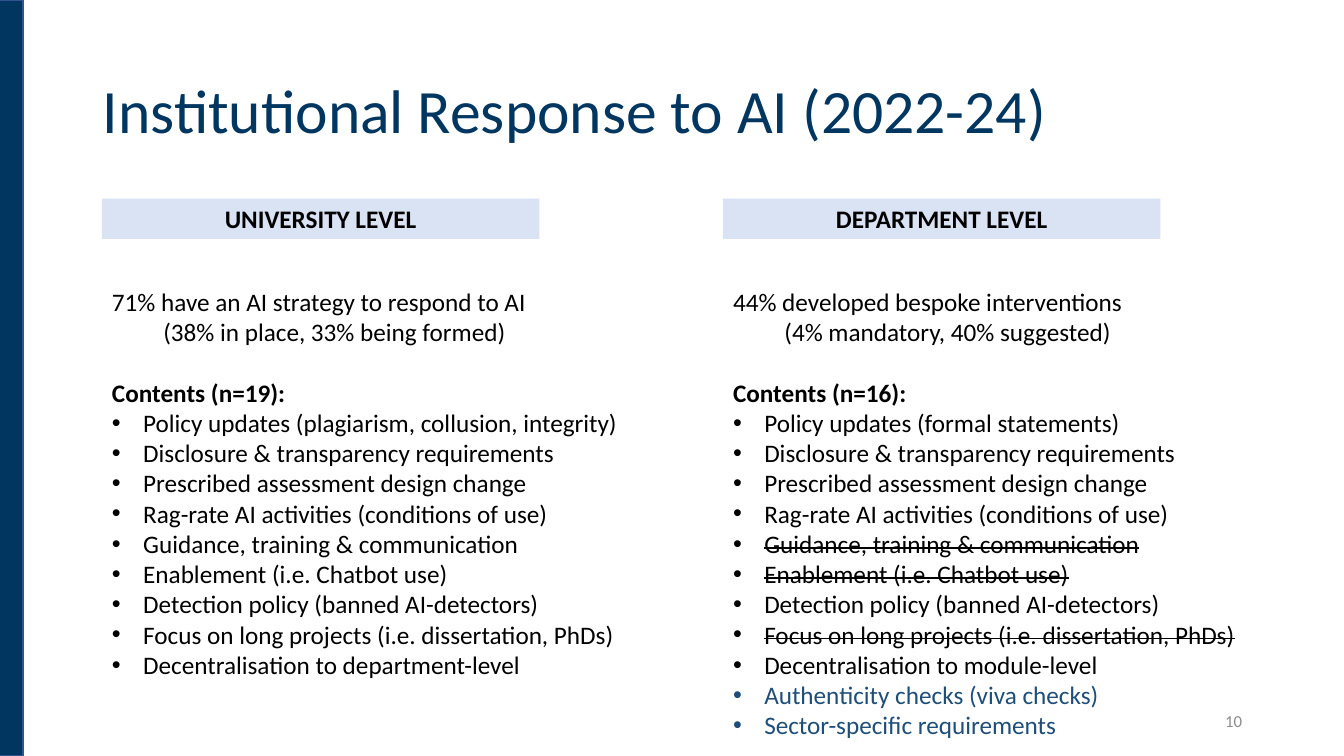
from lxml import etree
from pptx import Presentation
from pptx.dml.color import RGBColor
from pptx.enum.shapes import MSO_SHAPE
from pptx.enum.text import MSO_ANCHOR, MSO_AUTO_SIZE, PP_ALIGN
from pptx.oxml.ns import qn
from pptx.util import Inches, Pt

RECT = MSO_SHAPE.RECTANGLE
MIDDLE, TOP = MSO_ANCHOR.MIDDLE, MSO_ANCHOR.TOP
LEFT, CENTER, RIGHT = PP_ALIGN.LEFT, PP_ALIGN.CENTER, PP_ALIGN.RIGHT
NO_FIT = MSO_AUTO_SIZE.NONE

NAVY, EDGE, PALE = "00365F", "325491", "DAE3F3"
BLACK, GREY, BLUE = "000000", "8C8C8C", "1F4E79"
PLAIN, STRUCK, ADDED = "plain", "struck", "added"

LEVELS = [
    (7.58, 39.53, "UNIVERSITY LEVEL",
     "71% have an AI strategy to respond to AI",
     "(38% in place, 33% being formed)",
     "Contents (n=19):",
     [("Policy updates (plagiarism, collusion, integrity)", PLAIN),
      ("Disclosure & transparency requirements", PLAIN),
      ("Prescribed assessment design change", PLAIN),
      ("Rag-rate AI activities (conditions of use)", PLAIN),
      ("Guidance, training & communication", PLAIN),
      ("Enablement (i.e. Chatbot use)", PLAIN),
      ("Detection policy (banned AI-detectors)", PLAIN),
      ("Focus on long projects (i.e. dissertation, PhDs)", PLAIN),
      ("Decentralisation to department-level", PLAIN)]),
    (53.79, 41.41, "DEPARTMENT LEVEL",
     "44% developed bespoke interventions",
     "(4% mandatory, 40% suggested)",
     "Contents (n=16):",
     [("Policy updates (formal statements)", PLAIN),
      ("Disclosure & transparency requirements", PLAIN),
      ("Prescribed assessment design change", PLAIN),
      ("Rag-rate AI activities (conditions of use)", PLAIN),
      ("Guidance, training & communication", STRUCK),
      ("Enablement (i.e. Chatbot use)", STRUCK),
      ("Detection policy (banned AI-detectors)", PLAIN),
      ("Focus on long projects (i.e. dissertation, PhDs)", STRUCK),
      ("Decentralisation to module-level", PLAIN),
      ("Authenticity checks (viva checks)", ADDED),
      ("Sector-specific requirements", ADDED)]),
]


def color(code):
    return RGBColor.from_string(code)


class Deck:
    """Holds the style and the current slide; boxes are percent of the slide."""
    face = "Calibri"

    def __init__(self):
        self.show = Presentation()
        self.show.slide_width = Inches(13.33)
        self.show.slide_height = Inches(7.5)
        self.slide = self.show.slides.add_slide(self.show.slide_layouts[3])

    def scale(self, left, top, width, height):
        wide, high = self.show.slide_width, self.show.slide_height
        return [round(part * size / 100) for part, size in
                ((left, wide), (top, high), (width, wide), (height, high))]

    def place(self, holder, box, anchor):
        holder.left, holder.top, holder.width, holder.height = self.scale(*box)
        frame = holder.text_frame
        frame.word_wrap = True
        frame.auto_size = NO_FIT
        frame.vertical_anchor = anchor
        return frame

    def style(self, para, text, size, tint, align=LEFT, bold=False):
        para.text = text
        para.alignment = align
        font = para.runs[0].font
        font.name, font.size, font.bold = self.face, Pt(size), bold
        font.color.rgb = color(tint)

    def title(self, text, box):
        para = self.place(self.slide.shapes.title, box, MIDDLE).paragraphs[0]
        self.style(para, text, 44, NAVY)
        para.line_spacing = 0.9

    def block(self, box, fill, line=None):
        shape = self.slide.shapes.add_shape(RECT, *self.scale(*box))
        shape.shadow.inherit = False
        shape.fill.solid()
        shape.fill.fore_color.rgb = color(fill)
        if line:
            shape.line.color.rgb = color(line)
            shape.line.width = Pt(1)
        else:
            shape.line.fill.background()
        return shape

    def label(self, text, box):
        frame = self.place(self.block(box, PALE), box, TOP)
        self.style(frame.paragraphs[0], text, 18, BLACK, CENTER, True)

    def number(self, text, box):
        holder = self.slide.shapes.add_textbox(*self.scale(*box))
        frame = self.place(holder, box, MIDDLE)
        self.style(frame.paragraphs[0], text, 12, GREY, RIGHT)

    def indent(self, para, margin, hang=0, mark=None):
        """Sets indents in inches, and the bullet mark or none."""
        props = para._p.get_or_add_pPr()
        props.set("marL", str(Inches(margin)))
        props.set("indent", str(Inches(-hang)))
        if mark:
            font = etree.SubElement(props, qn("a:buFont"))
            font.set("typeface", "Arial")
            etree.SubElement(props, qn("a:buChar")).set("char", mark)
        else:
            etree.SubElement(props, qn("a:buNone"))

    def body(self, index, box, claim, detail, head, items):
        frame = self.place(self.slide.placeholders[index], box, TOP)
        rows = [(claim, PLAIN), (detail, PLAIN), (head, PLAIN)] + items
        for row, (text, state) in enumerate(rows):
            para = frame.add_paragraph() if row else frame.paragraphs[0]
            if row > 2:
                self.indent(para, 0.31, 0.31, "•")
            else:
                self.indent(para, 0.51 if text == detail else 0)
            tint = BLUE if state == ADDED else BLACK
            self.style(para, text, 18, tint, bold=text == head)
            para.space_before = Pt(21.6 if text == head else 0)
            if state == STRUCK:
                props = para.runs[0].font._element
                props.set("strike", "sngStrike")


def main():
    deck = Deck()
    deck.block((-0.3, 0, 2.03, 100), NAVY, EDGE)
    deck.title("Institutional Response to AI (2022-24)",
               (6.9, 5.33, 86.27, 19.33))
    for index, (left, width, name, *texts) in enumerate(LEVELS, 1):
        deck.label(name, (left, 26.27, 32.56, 5.33))
        deck.body(index, (left, 37.2, width, 61.87), *texts)
    deck.number("10", (70.67, 92.67, 22.5, 5.33))
    deck.show.save("out.pptx")


if __name__ == "__main__":
    main()
